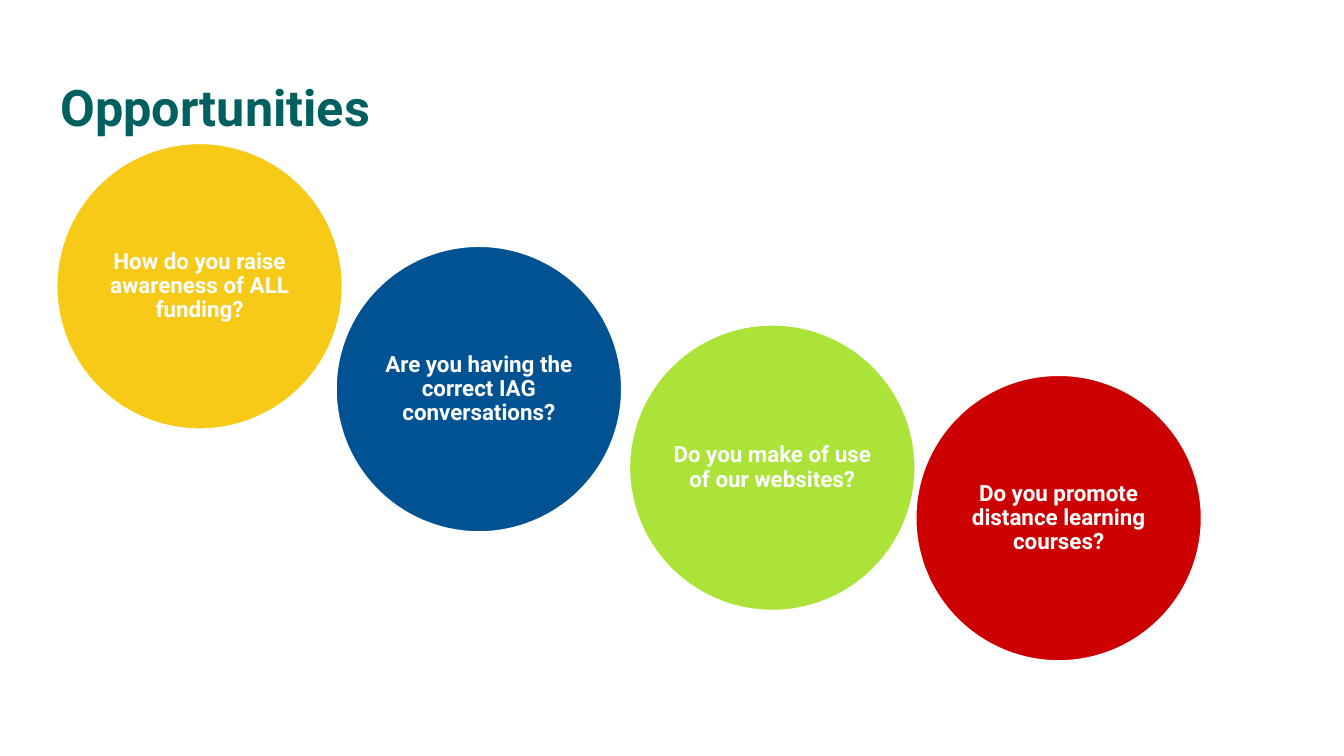
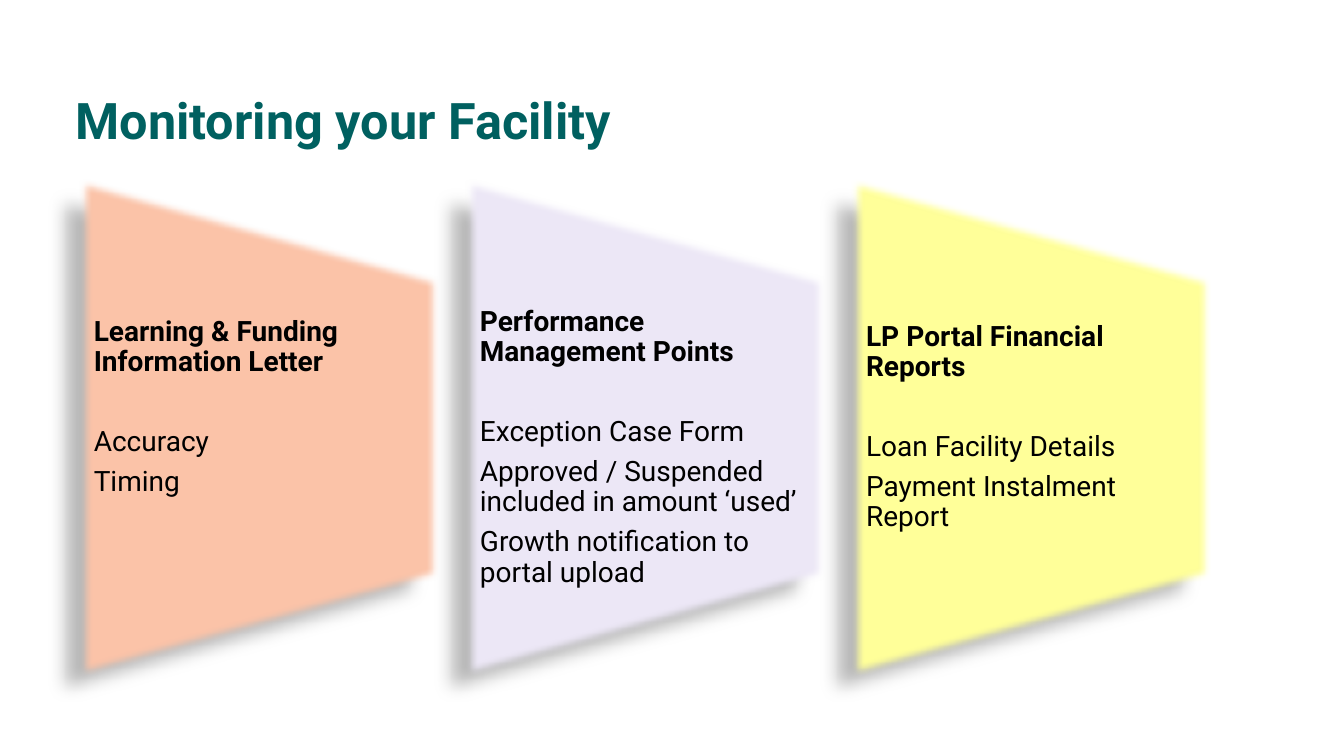
from lxml import etree
from pptx import Presentation
from pptx.dml.color import RGBColor
from pptx.enum.shapes import MSO_SHAPE as Shape
from pptx.enum.text import MSO_ANCHOR as Anchor, PP_ALIGN as Align
from pptx.oxml import parse_xml
from pptx.oxml.ns import nsdecls
from pptx.util import Inches, Pt

FONT = "Roboto"
TEAL = RGBColor(0x00, 0x60, 0x60)
WHITE = RGBColor(0xFF, 0xFF, 0xFF)
BLACK = RGBColor(0x00, 0x00, 0x00)
GOLD = RGBColor(0xF7, 0xCA, 0x18)
BLUE = RGBColor(0x00, 0x52, 0x93)
LIME = RGBColor(0xAB, 0xE3, 0x38)
RED = RGBColor(0xCC, 0x00, 0x00)
PEACH = RGBColor(0xFB, 0xC3, 0xA8)
LAVENDER = RGBColor(0xEC, 0xE7, 0xF6)
YELLOW = RGBColor(0xFF, 0xFF, 0x99)

PANEL_EFFECTS = f"""<a:effectLst {nsdecls('a')}>
  <a:outerShdw blurRad="{Pt(11.8)}" dist="{Pt(19.7)}" dir="{141 * 60000}" rotWithShape="0">
    <a:srgbClr val="000000"><a:alpha val="28000"/></a:srgbClr>
  </a:outerShdw>
  <a:softEdge rad="{Pt(5)}"/>
</a:effectLst>"""


def add_run(paragraph, text, size, color, bold=True):
    run = paragraph.add_run()
    run.text = text
    run.font.name = FONT
    run.font.size = Pt(size)
    run.font.bold = bold
    run.font.color.rgb = color


def add_title(slide, text, left, top, width, height, line_spacing):
    box = slide.shapes.add_textbox(Inches(left), Inches(top), Inches(width), Inches(height))
    box.text_frame.word_wrap = True
    paragraph = box.text_frame.paragraphs[0]
    paragraph.line_spacing = line_spacing
    add_run(paragraph, text, 36, TEAL)


presentation = Presentation()
presentation.slide_width = Inches(13.33)
presentation.slide_height = Inches(7.5)
blank = presentation.slide_layouts[6]

slide = presentation.slides.add_slide(blank)
DIAMETER = Inches(2.84)
circles = [
    (0.56, 1.42, GOLD, "How do you raise awareness of ALL funding?"),
    (3.33, 2.44, BLUE, "Are you having the correct IAG conversations?"),
    (6.24, 3.22, LIME, "Do you make of use of our websites?"),
    (9.08, 3.72, RED, "Do you promote distance learning courses?"),
]
for left, top, color, question in circles:
    circle = slide.shapes.add_shape(Shape.OVAL, Inches(left), Inches(top), DIAMETER, DIAMETER)
    circle.shadow.inherit = False
    circle.fill.solid()
    circle.fill.fore_color.rgb = color
    circle.line.color.rgb = WHITE
    circle.line.width = Pt(1.5)
    frame = circle.text_frame
    frame.word_wrap = True
    frame.vertical_anchor = Anchor.MIDDLE
    frame.margin_left = frame.margin_right = frame.margin_top = frame.margin_bottom = 0
    paragraph = frame.paragraphs[0]
    paragraph.alignment = Align.CENTER
    paragraph.line_spacing = 0.9
    add_run(paragraph, question, 16, WHITE)
add_title(slide, "Opportunities", 0.5, 0.71, 6.16, 0.71, 1.0)

slide = presentation.slides.add_slide(blank)
add_title(slide, "Monitoring your Facility", 0.65, 0.9, 11.5, 0.5, 0.9)
PANEL_LEFT, PANEL_STEP = 0.79, 3.83
PANEL_WIDTH, PANEL_HEIGHT, PANEL_MIDDLE = 3.56, 5, 4.24
TEXT_HEIGHT = 3
panels = [
    (PEACH, 0, 0.4, "Learning & Funding Information Letter", ["Accuracy", "Timing"]),
    (LAVENDER, 0.4, 0, "Performance Management Points",
     ["Exception Case Form", "Approved / Suspended included in amount ‘used’",
      "Growth notification to portal upload"]),
    (YELLOW, 0, 0, "LP Portal Financial Reports",
     ["Loan Facility Details", "Payment Instalment Report"]),
]
for index, (color, margin_top, margin_bottom, heading, points) in enumerate(panels):
    left = PANEL_LEFT + index * PANEL_STEP
    panel = slide.shapes.add_shape(
        Shape.FLOWCHART_MANUAL_OPERATION,
        Inches(left + (PANEL_WIDTH - PANEL_HEIGHT) / 2), Inches(PANEL_MIDDLE - PANEL_WIDTH / 2),
        Inches(PANEL_HEIGHT), Inches(PANEL_WIDTH))
    panel.rotation = 270
    panel.fill.solid()
    panel.fill.fore_color.rgb = color
    panel.line.fill.background()
    panel.element.spPr.append(parse_xml(PANEL_EFFECTS))

    box = slide.shapes.add_textbox(
        Inches(left), Inches(PANEL_MIDDLE - TEXT_HEIGHT / 2),
        Inches(PANEL_WIDTH), Inches(TEXT_HEIGHT))
    frame = box.text_frame
    frame.word_wrap = True
    frame.vertical_anchor = Anchor.MIDDLE
    frame.margin_left = frame.margin_right = Inches(0.14)
    frame.margin_top = Inches(margin_top)
    frame.margin_bottom = Inches(margin_bottom)
    paragraph = frame.paragraphs[0]
    paragraph.line_spacing = 0.9
    paragraph.space_after = Pt(35.6)
    add_run(paragraph, heading, 20, BLACK)
    for point in points:
        paragraph = frame.add_paragraph()
        paragraph.line_spacing = 0.9
        paragraph.space_after = Pt(7)
        add_run(paragraph, point, 20, BLACK, bold=False)

presentation.save("out.pptx")
